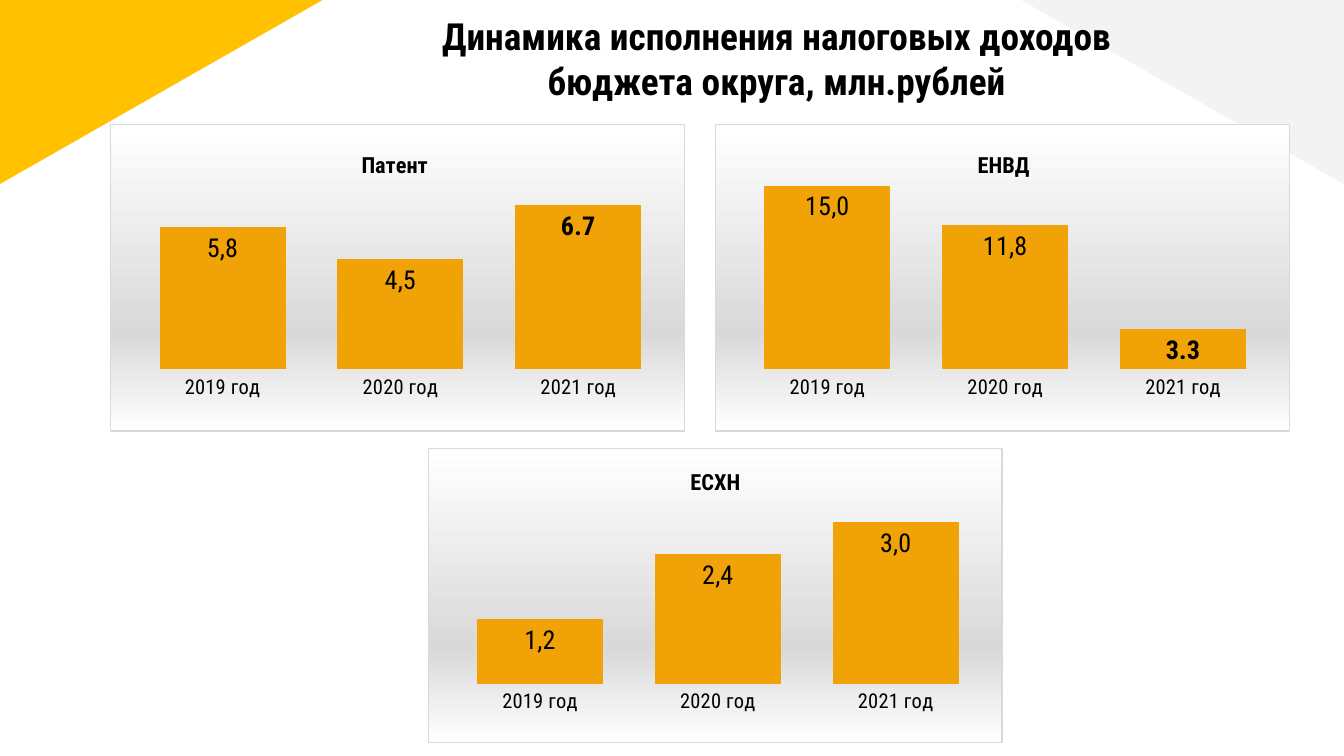
import pptx
import pptx.chart.data
import pptx.dml.color
import pptx.enum.chart
import pptx.enum.shapes
import pptx.enum.text
import pptx.oxml
import pptx.oxml.ns
import pptx.util

Cm = pptx.util.Cm
FACE = "Roboto Condensed"
YEARS = ["2019 год", "2020 год", "2021 год"]
WIDE, HIGH = 25.4, 14.29


def paint(color, code):
    """Set a colour from a hex string."""
    color.rgb = pptx.dml.color.RGBColor.from_string(code)


def style(font, size, bold=False):
    """Give a font the slide's face in black."""
    font.name = FACE
    font.size = pptx.util.Pt(size)
    font.bold = bold
    paint(font.color, "000000")


def parse(text):
    """Turn XML text with a and c prefixes into an element."""
    names = pptx.oxml.ns.nsdecls("a", "c")
    return pptx.oxml.parse_xml(text.replace(">", f" {names}>", 1))


def layout(spot, inner=False):
    """Build a manual chart layout from fractions of the chart."""
    keys = ["x", "y", "w", "h"][:len(spot)]
    parts = '<c:layoutTarget val="inner"/>' if inner else ""
    parts += "".join(f'<c:{key}Mode val="edge"/>' for key in keys[:2])
    parts += "".join(f'<c:{key} val="{part}"/>' for key, part in zip(keys, spot))
    return parse(f"<c:layout><c:manualLayout>{parts}</c:manualLayout></c:layout>")


def backdrop():
    """Build the grey gradient and thin border of a chart."""
    stops = [(0, "FFFFFF"), (68000, "D9D9D9"), (100000, "FFFFFF")]
    shades = "".join(
        f'<a:gs pos="{pos}"><a:srgbClr val="{code}"/></a:gs>' for pos, code in stops)
    return parse(
        f'<c:spPr><a:gradFill><a:gsLst>{shades}</a:gsLst><a:lin ang="5400000"/></a:gradFill>'
        '<a:ln w="9525"><a:solidFill><a:srgbClr val="D9D9D9"/></a:solidFill></a:ln></c:spPr>')


def corner(slide, box, code, turn=0, flip=False):
    """Place a triangle that fills a top corner of the slide."""
    left, top, width, height = map(Cm, box)
    shape = slide.shapes.add_shape(
        pptx.enum.shapes.MSO_SHAPE.RIGHT_TRIANGLE, left, top, width, height)
    shape.shadow.inherit = False
    shape.fill.solid()
    paint(shape.fill.fore_color, code)
    shape.line.fill.background()
    shape.rotation = turn
    if flip:
        shape.element.spPr.xfrm.set("flipV", "1")


def heading(slide, box, lines):
    """Place the centred slide title."""
    frame = slide.shapes.add_textbox(*map(Cm, box)).text_frame
    frame.word_wrap = True
    frame.margin_left = frame.margin_right = Cm(0.25)
    frame.margin_top = frame.margin_bottom = Cm(0.25)
    frame.text = "\n".join(lines)
    for para in frame.paragraphs:
        para.alignment = pptx.enum.text.PP_ALIGN.CENTER
        style(para.font, 20, True)


def caption(chart, name, spot):
    """Give a chart its bold title at a fixed spot."""
    title = chart.chart_title
    para = title.text_frame.paragraphs[0]
    run = para.add_run()
    run.text = name
    style(run.font, 12, True)
    node = title._element
    for old in node.findall(pptx.oxml.ns.qn("c:layout")):
        node.remove(old)
    node.find(pptx.oxml.ns.qn("c:tx")).addnext(layout(spot))


def label(plot, marks):
    """Show bold values, with plain text on the marked points."""
    inside = pptx.enum.chart.XL_LABEL_POSITION.INSIDE_END
    plot.has_data_labels = True
    labels = plot.series[0].data_labels
    labels.show_value = True
    labels.position = inside
    style(labels.font, 14, True)
    for num, mark in enumerate(marks):
        tag = plot.series[0].points[num].data_label
        run = tag.text_frame.paragraphs[0].add_run()
        run.text = mark
        style(run.font, 14)
        tag.position = inside


def columns(slide, box, name, vals, marks, limit, spot):
    """Place one column chart with its title and labels."""
    data = pptx.chart.data.CategoryChartData()
    data.categories = YEARS
    data.add_series(name, vals)
    kind = pptx.enum.chart.XL_CHART_TYPE.COLUMN_CLUSTERED
    chart = slide.shapes.add_chart(kind, *map(Cm, box), data).chart
    chart.has_legend = False
    style(chart.font, 12)
    caption(chart, name, spot)

    plot = chart.plots[0]
    plot.gap_width = 41
    plot.vary_by_categories = False
    fill = plot.series[0].format.fill
    fill.solid()
    paint(fill.fore_color, "F0A206")
    label(plot, marks)

    none = pptx.enum.chart.XL_TICK_MARK.NONE
    base, scale = chart.category_axis, chart.value_axis
    base.major_tick_mark = base.minor_tick_mark = none
    base.format.line.fill.background()
    style(base.tick_labels.font, 11)
    scale.has_major_gridlines = False
    scale.minimum_scale, scale.maximum_scale = 0, limit
    scale.visible = False

    whole = chart._chartSpace.chart
    area = whole.plotArea
    for old in area.findall(pptx.oxml.ns.qn("c:layout")):
        area.remove(old)
    area.insert(0, layout((0.04, 0.16, 0.93, 0.64), inner=True))
    whole.addnext(backdrop())


def main():
    """Build the slide and save it."""
    deck = pptx.Presentation()
    deck.slide_width, deck.slide_height = Cm(WIDE), Cm(HIGH)
    slide = deck.slides.add_slide(deck.slide_layouts[6])

    wing, drop = 6.1, 3.48
    corner(slide, (0, 0, wing, drop), "FFC100", flip=True)
    corner(slide, (WIDE - wing, 0, wing, drop), "F3F3F3", turn=180)

    width, tall, top = 10.87, 5.82, 2.34
    columns(slide, (2.08, top, width, tall), "Патент",
            (5.8, 4.5, 6.7), ("5,8", "4,5"), 8, (0.43, 0.07))
    columns(slide, (13.51, top, width, tall), "ЕНВД",
            (15, 11.8, 3.3), ("15,0", "11,8"), 16, (0.45, 0.07))
    columns(slide, (8.08, 8.46, width, 5.59), "ЕСХН",
            (1.2, 2.4, 3), ("1,2", "2,4", "3,0"), 3.5, (0.45, 0.05))

    heading(slide, (3.43, 0, 22.5, 1.6),
            ("Динамика исполнения налоговых доходов", "бюджета округа, млн.рублей"))
    deck.save("out.pptx")


if __name__ == "__main__":
    main()
